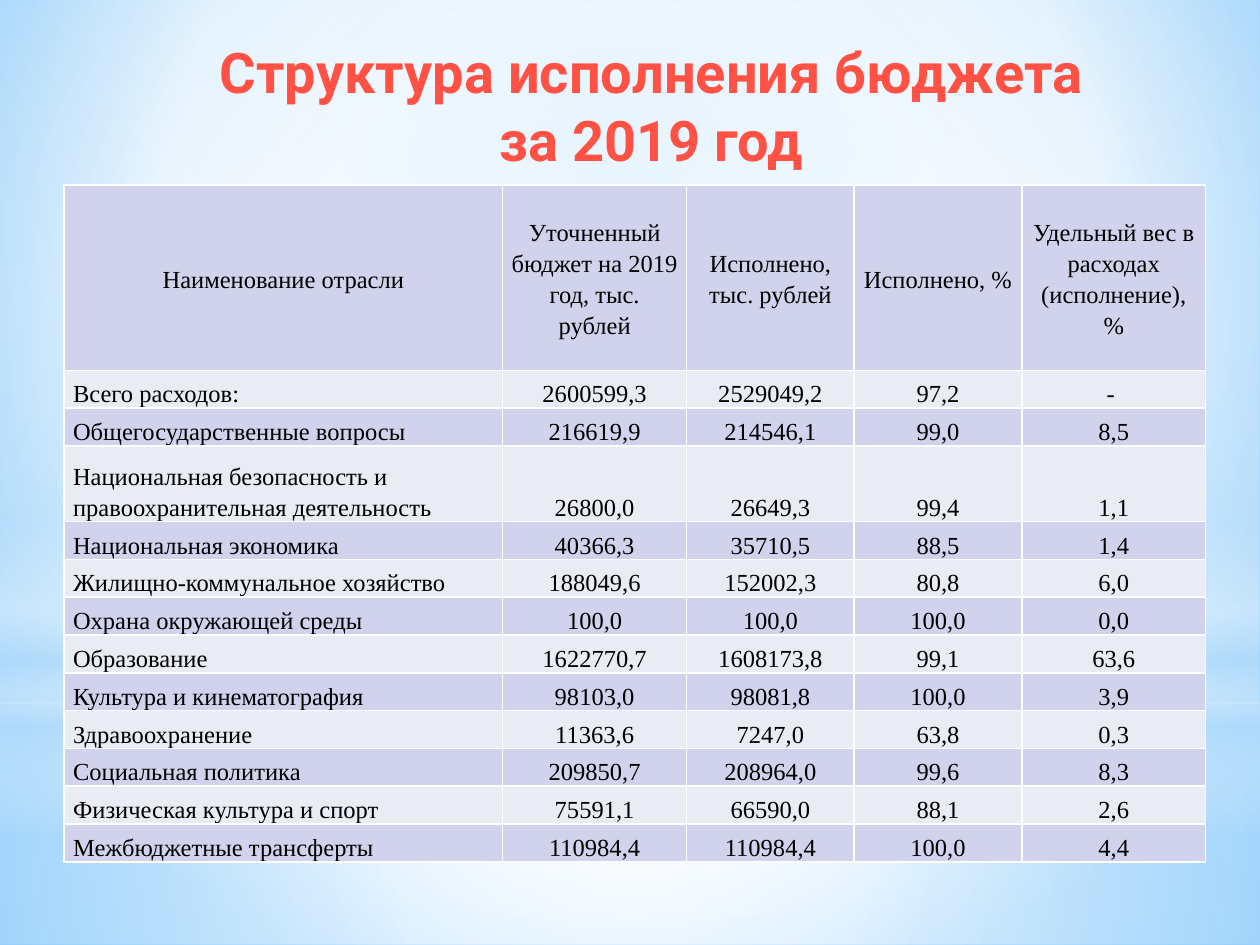
from dataclasses import dataclass

from lxml.etree import SubElement
from pptx import Presentation
from pptx.dml.color import RGBColor as RGB
from pptx.enum.shapes import MSO_SHAPE as Preset
from pptx.enum.text import MSO_ANCHOR as Anchor, PP_ALIGN as Align
from pptx.oxml.ns import qn
from pptx.util import Inches, Pt


@dataclass(frozen=True)
class Theme:
    title_font: str = "Roboto"
    table_font: str = "Times New Roman"
    title_size: int = 32
    table_size: int = 14
    border_width: int = 1
    line_spacing: float = 1.15
    title: str = "FF5244"
    ink: str = "000000"
    white: str = "FFFFFF"
    haze: str = "B4DCFA"
    sky: str = "9ED5FF"
    deep_sky: str = "5BB9FF"
    band_dark: str = "D0D3EB"
    band_light: str = "E9EBF5"


THEME = Theme()
WIDTH, HEIGHT = 10, 7.5
CENTRE = (50, 50, 50, 50)

TITLE = "Структура исполнения бюджета за 2019 год"
COLUMN_WIDTHS = (3.48, 1.46, 1.33, 1.33, 1.46)
HEADER_HEIGHT, LINE_HEIGHT = 1.47, 0.3
LONG_NAME = "Национальная безопасность и правоохранительная деятельность"
BUDGET = (
    ("Наименование отрасли", "Уточненный бюджет на 2019 год, тыс. рублей",
     "Исполнено, тыс. рублей", "Исполнено, %", "Удельный вес в расходах (исполнение), %"),
    ("Всего расходов:", "2600599,3", "2529049,2", "97,2", "- "),
    ("Общегосударственные вопросы", "216619,9", "214546,1", "99,0", "8,5"),
    (LONG_NAME, "26800,0", "26649,3", "99,4", "1,1"),
    ("Национальная экономика", "40366,3", "35710,5", "88,5", "1,4"),
    ("Жилищно-коммунальное хозяйство", "188049,6", "152002,3", "80,8", "6,0"),
    ("Охрана окружающей среды", "100,0", "100,0", "100,0", "0,0"),
    ("Образование", "1622770,7", "1608173,8", "99,1", "63,6"),
    ("Культура и кинематография", "98103,0", "98081,8", "100,0", "3,9"),
    ("Здравоохранение", "11363,6", "7247,0", "63,8", "0,3"),
    ("Социальная политика", "209850,7", "208964,0", "99,6", "8,3"),
    ("Физическая культура и спорт", "75591,1", "66590,0", "88,1", "2,6"),
    ("Межбюджетные трансферты", "110984,4", "110984,4", "100,0", "4,4"),
)


def set_gradient(fill, element, stops, focus=None):
    """Stops are (position, colour, opacity) in percent; without a focus it runs downwards."""
    fill.gradient()
    gradient = element.xpath(".//a:gradFill")[0]
    for part in list(gradient):
        gradient.remove(part)
    stop_list = SubElement(gradient, qn("a:gsLst"))
    for position, colour, opacity in stops:
        stop = SubElement(stop_list, qn("a:gs"), pos=str(position * 1000))
        tint = SubElement(stop, qn("a:srgbClr"), val=colour)
        if opacity < 100:
            SubElement(tint, qn("a:alpha"), val=str(opacity * 1000))
    if focus:
        circle = SubElement(gradient, qn("a:path"), {"path": "circle"})
        sides = {side: str(share * 1000) for side, share in zip("ltrb", focus)}
        SubElement(circle, qn("a:fillToRect"), sides)
    else:
        SubElement(gradient, qn("a:lin"), ang="5400000", scaled="0")


def add_glow(slide, box, preset, stops, focus=CENTRE):
    glow = slide.shapes.add_shape(preset, *map(Inches, box))
    glow.shadow.inherit = False
    glow.line.fill.background()
    set_gradient(glow.fill, glow._element, stops, focus)


def add_backdrop(slide, width, height):
    white, haze = THEME.white, THEME.haze
    set_gradient(slide.background.fill, slide._element,
                 [(0, THEME.sky, 100), (60, white, 100), (100, THEME.deep_sky, 100)],
                 (20, 10, 20, 60))
    horizon = height * 0.744
    add_glow(slide, (0, horizon, width, height - horizon), Preset.RECTANGLE,
             [(0, white, 91), (37, white, 76), (100, haze, 79)])
    add_glow(slide, (0, 0, width, horizon), Preset.RECTANGLE,
             [(0, white, 89), (48, white, 62), (100, haze, 79)])
    add_glow(slide, (0, height * 0.55, width, height / 3), Preset.RECTANGLE,
             [(0, white, 0), (29, white, 30), (45, haze, 40),
              (55, white, 26), (65, haze, 60), (100, white, 0)], focus=None)
    add_glow(slide, (0, height * 0.233, width, horizon), Preset.OVAL,
             [(0, white, 100), (56, white, 0)])


def style_paragraph(paragraph, font_name, size, colour, align):
    paragraph.alignment = align
    font = paragraph.font
    font.name, font.size = font_name, Pt(size)
    font.color.rgb = RGB.from_string(colour)


def add_title(slide, box):
    frame = slide.shapes.add_textbox(*map(Inches, box)).text_frame
    frame.word_wrap = True
    frame.vertical_anchor = Anchor.TOP
    frame.margin_top = Inches(0.09)
    heading = frame.paragraphs[0]
    heading.text = TITLE
    style_paragraph(heading, THEME.title_font, THEME.title_size, THEME.title, Align.CENTER)
    heading.font.bold = True


def set_borders(cell):
    properties = cell._tc.get_or_add_tcPr()
    for order, side in enumerate(("a:lnL", "a:lnR", "a:lnT", "a:lnB")):
        border = SubElement(properties, qn(side), w=str(Pt(THEME.border_width)))
        SubElement(SubElement(border, qn("a:solidFill")), qn("a:srgbClr"), val=THEME.white)
        properties.insert(order, border)


def fill_cell(cell, text, is_header, is_name, colour):
    cell.fill.solid()
    cell.fill.fore_color.rgb = RGB.from_string(colour)
    set_borders(cell)
    cell.margin_left = cell.margin_right = Inches(0.07)
    cell.margin_top = cell.margin_bottom = 0
    cell.vertical_anchor = Anchor.MIDDLE if is_header else Anchor.BOTTOM
    entry = cell.text_frame.paragraphs[0]
    entry.text = text
    entry.line_spacing = THEME.line_spacing
    align = Align.LEFT if is_name and not is_header else Align.CENTER
    style_paragraph(entry, THEME.table_font, THEME.table_size, THEME.ink, align)


def add_budget_table(slide, box):
    table = slide.shapes.add_table(len(BUDGET), len(COLUMN_WIDTHS), *map(Inches, box)).table
    for column, width in zip(table.columns, COLUMN_WIDTHS):
        column.width = Inches(width)
    for r, record in enumerate(BUDGET):
        lines = 2 if record[0] == LONG_NAME else 1
        table.rows[r].height = Inches(lines * LINE_HEIGHT if r else HEADER_HEIGHT)
        band = THEME.band_light if r % 2 else THEME.band_dark
        for c, text in enumerate(record):
            fill_cell(table.cell(r, c), text, r == 0, c == 0, band)


def main():
    deck = Presentation()
    deck.slide_width, deck.slide_height = Inches(WIDTH), Inches(HEIGHT)
    slide = deck.slides.add_slide(deck.slide_layouts[6])
    add_backdrop(slide, WIDTH, HEIGHT)
    add_title(slide, (1.61, 0.21, 7.12, 1.02))
    add_budget_table(slide, (0.51, 1.47, sum(COLUMN_WIDTHS), 5.35))
    deck.save("out.pptx")


if __name__ == "__main__":
    main()
